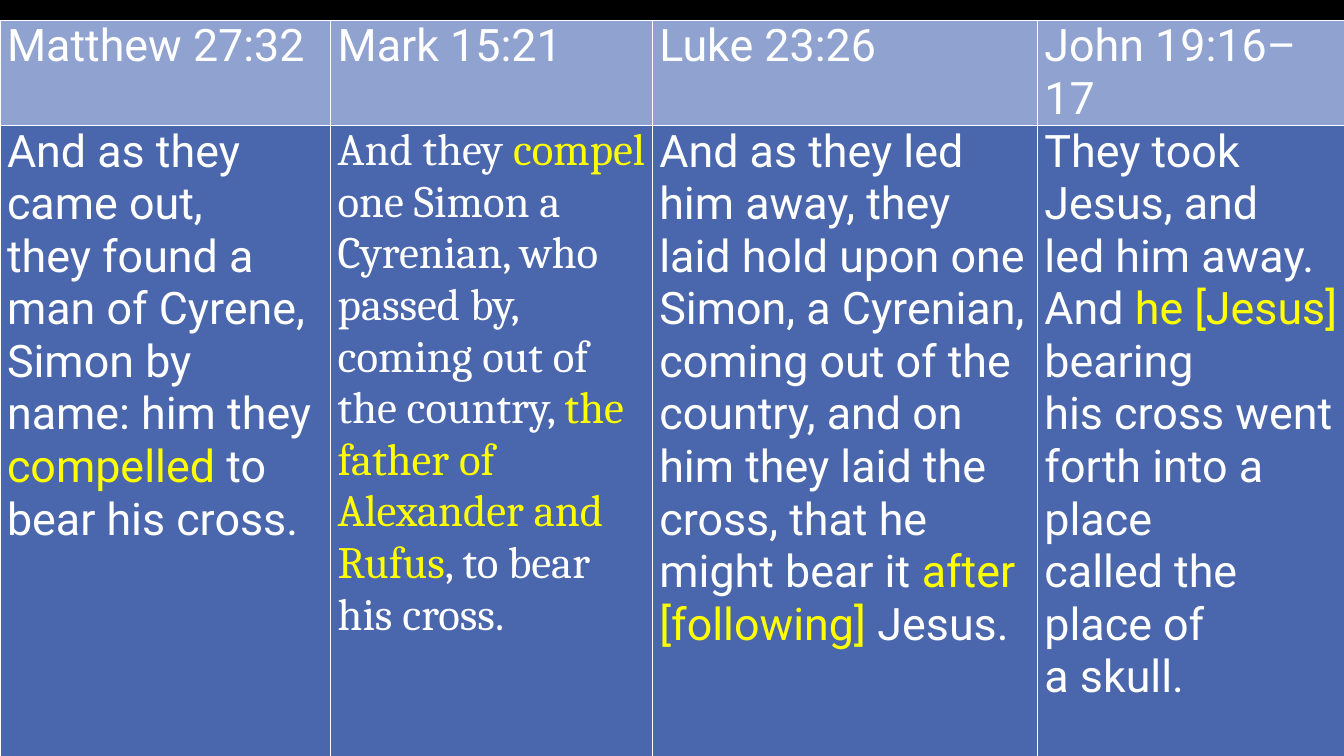
from lxml.etree import SubElement as Sub
from pptx import Presentation as Deck
from pptx.dml.color import RGBColor as Rgb
from pptx.oxml.ns import qn
from pptx.util import Inches, Pt

HUES = {"back": "000000", "head": "90A2CF", "body": "4A66AC",
        "text": "FFFFFF", "mark": "FFFF00"}
WIDTHS = [3.28, 3.19, 3.82, 3.08]
ROWS = [0.79, 6.28]
HARD = chr(160)
VERSES = [
    ("Matthew 27:32", "Roboto", [[
        ("And as they came out, they~found a man of Cyrene, Simon by name: him they ", "text"),
        ("compelled", "mark"),
        (" to bear his cross.", "text")]]),
    ("Mark 15:21", "Cambria", [[
        ("And they ", "text"),
        ("compel ", "mark"),
        ("one Simon a Cyrenian, who passed by, coming out of the country, ", "text"),
        ("the father of Alexander and Rufus", "mark"),
        (", to bear his cross.~", "text")]]),
    ("Luke 23:26", "Roboto", [[
        ("And as they led him away, they laid hold upon one Simon, a Cyrenian, coming out "
         "of the country, and on him they laid the cross, that he might bear~it~", "text"),
        ("after [following] ", "mark"),
        ("Jesus.", "text")]]),
    ("John 19:16–17", "Roboto", [
        [("They took Jesus, and led~him~away. And ", "text"),
         ("he~[Jesus] ", "mark"),
         ("bearing~", "text")],
        [("his~cross~went forth into a place called~the place~of a~skull.~", "text")]]),
]


def hue(name):
    """Return the named colour."""
    return Rgb.from_string(HUES[name])


def edge(cell):
    """Draw thin white borders on a cell."""
    props = cell._tc.get_or_add_tcPr()
    for side in "LRTB":
        line = Sub(props, qn(f"a:ln{side}"), w=str(Pt(1)))
        Sub(Sub(line, qn("a:solidFill")), qn("a:srgbClr"), val=HUES["text"])


def write(cell, paras, face, fill):
    """Fill a cell with paragraphs of coloured runs, where ~ is a hard space."""
    edge(cell)
    cell.fill.solid()
    cell.fill.fore_color.rgb = hue(fill)
    cell.margin_left = cell.margin_right = Inches(0.07)
    cell.margin_top = cell.margin_bottom = 0
    frame = cell.text_frame
    for i, parts in enumerate(paras):
        para = frame.add_paragraph() if i else frame.paragraphs[0]
        for text, tone in parts:
            run = para.add_run()
            run.text = text.replace("~", HARD)
            run.font.size = Pt(32)
            run.font.name = face
            run.font.color.rgb = hue(tone)


def add_grid(slide, left, top, width, height):
    """Place the table of parallel verses in the given box."""
    frame = slide.shapes.add_table(len(ROWS), len(VERSES), Inches(left), Inches(top),
                                   Inches(width), Inches(height))
    grid = frame.table
    grid.first_row = grid.horz_banding = False
    for row, size in zip(grid.rows, ROWS):
        row.height = Inches(size)
    for i, (title, face, paras) in enumerate(VERSES):
        grid.columns[i].width = Inches(WIDTHS[i])
        write(grid.cell(0, i), [[(title, "text")]], "Roboto", "head")
        write(grid.cell(1, i), paras, face, "body")
    frame.width, frame.height = Inches(width), Inches(height)


def main():
    """Build the slide and save it."""
    deck = Deck()
    deck.slide_width, deck.slide_height = Inches(13.33), Inches(7.5)
    slide = deck.slides.add_slide(deck.slide_layouts[6])
    slide.background.fill.solid()
    slide.background.fill.fore_color.rgb = hue("back")
    add_grid(slide, 0, 0.2, sum(WIDTHS), 7.19)
    deck.save("out.pptx")


if __name__ == "__main__":
    main()
